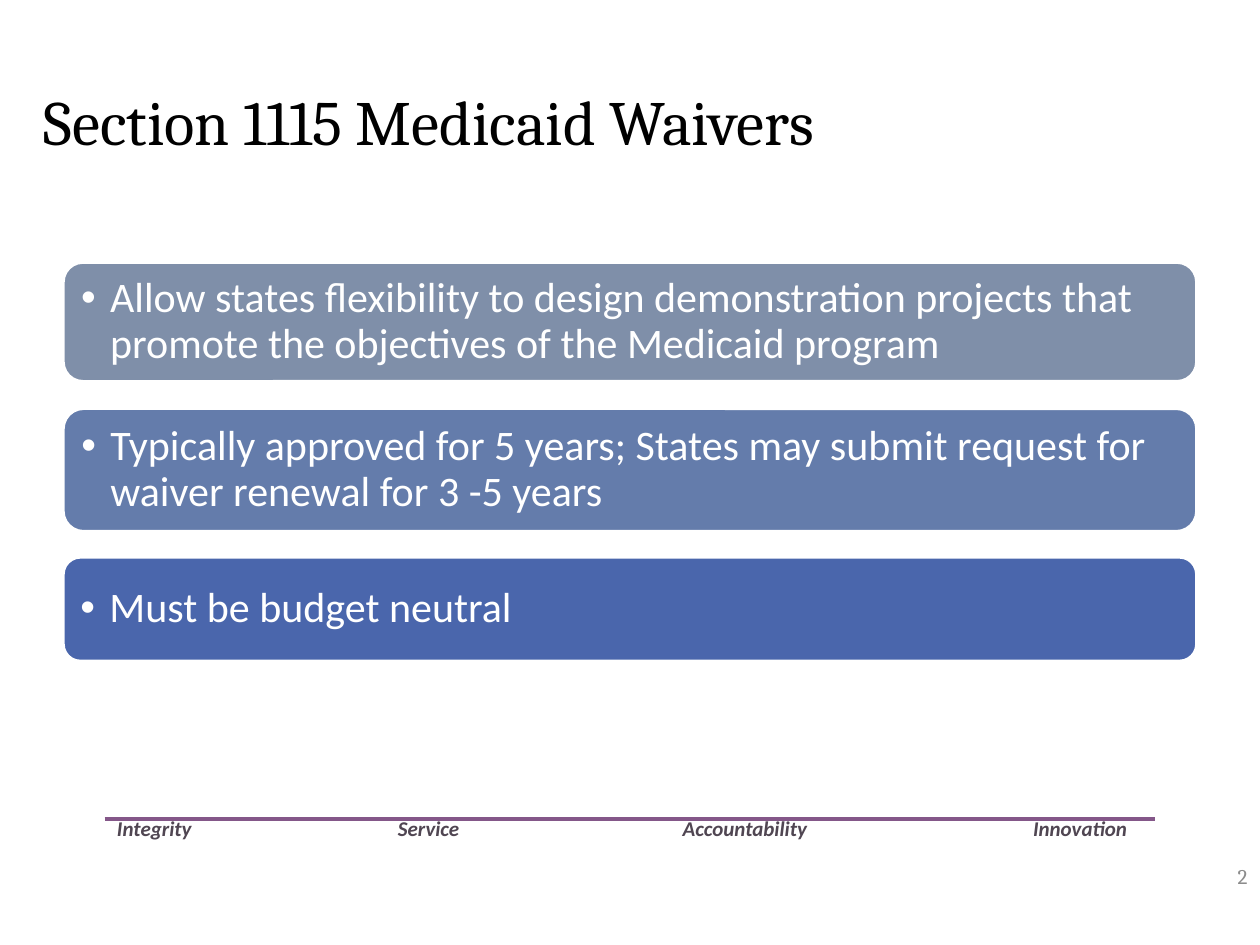
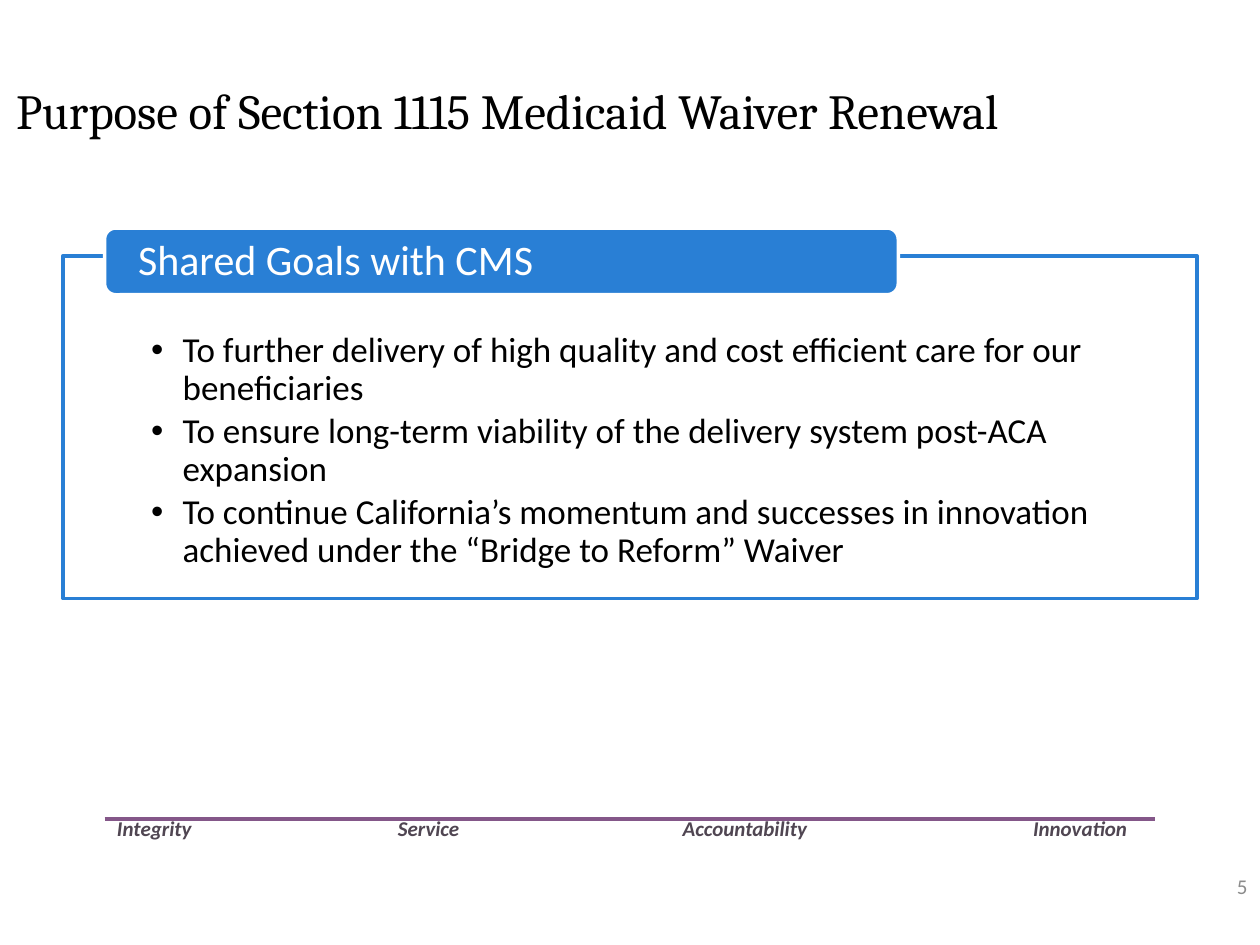
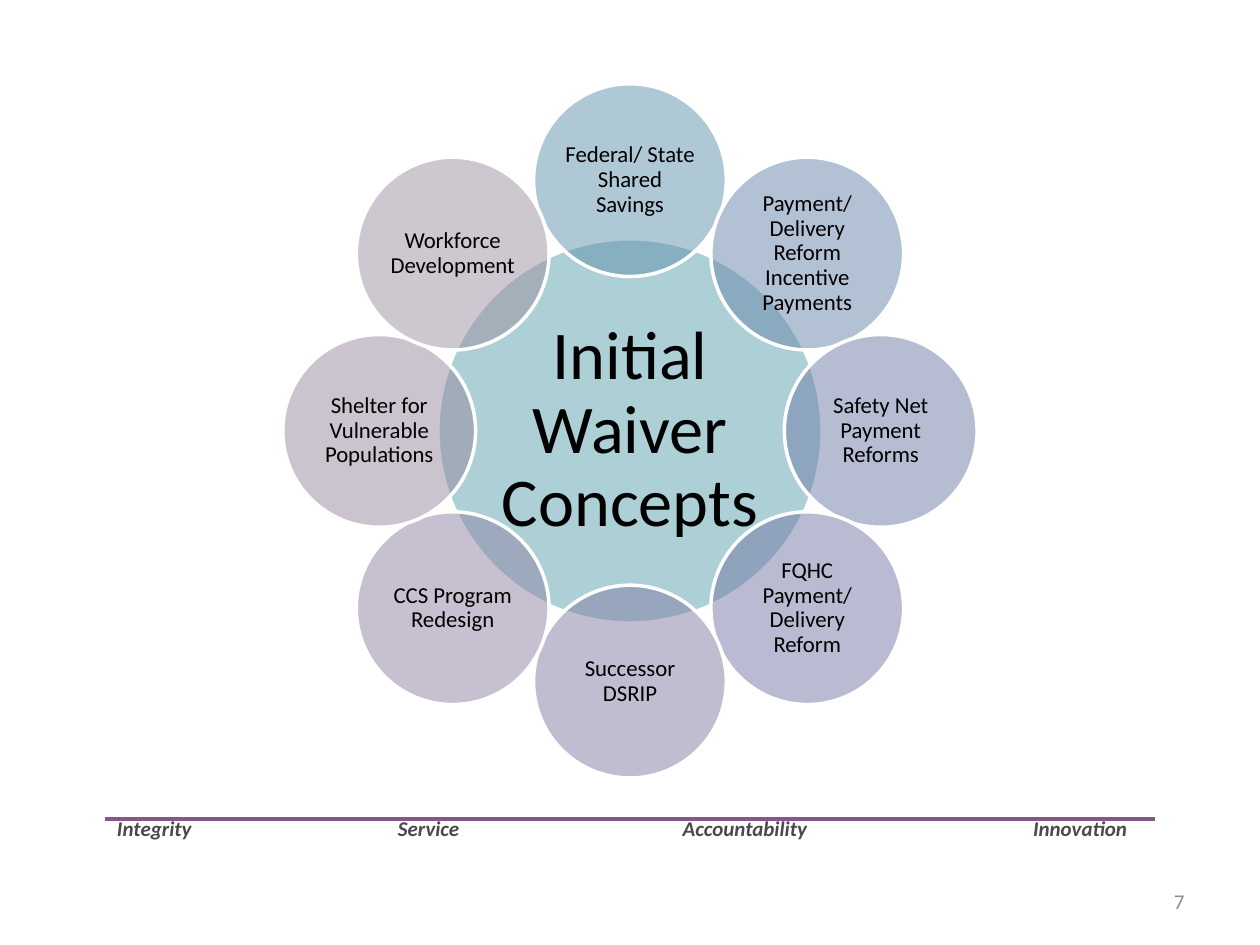
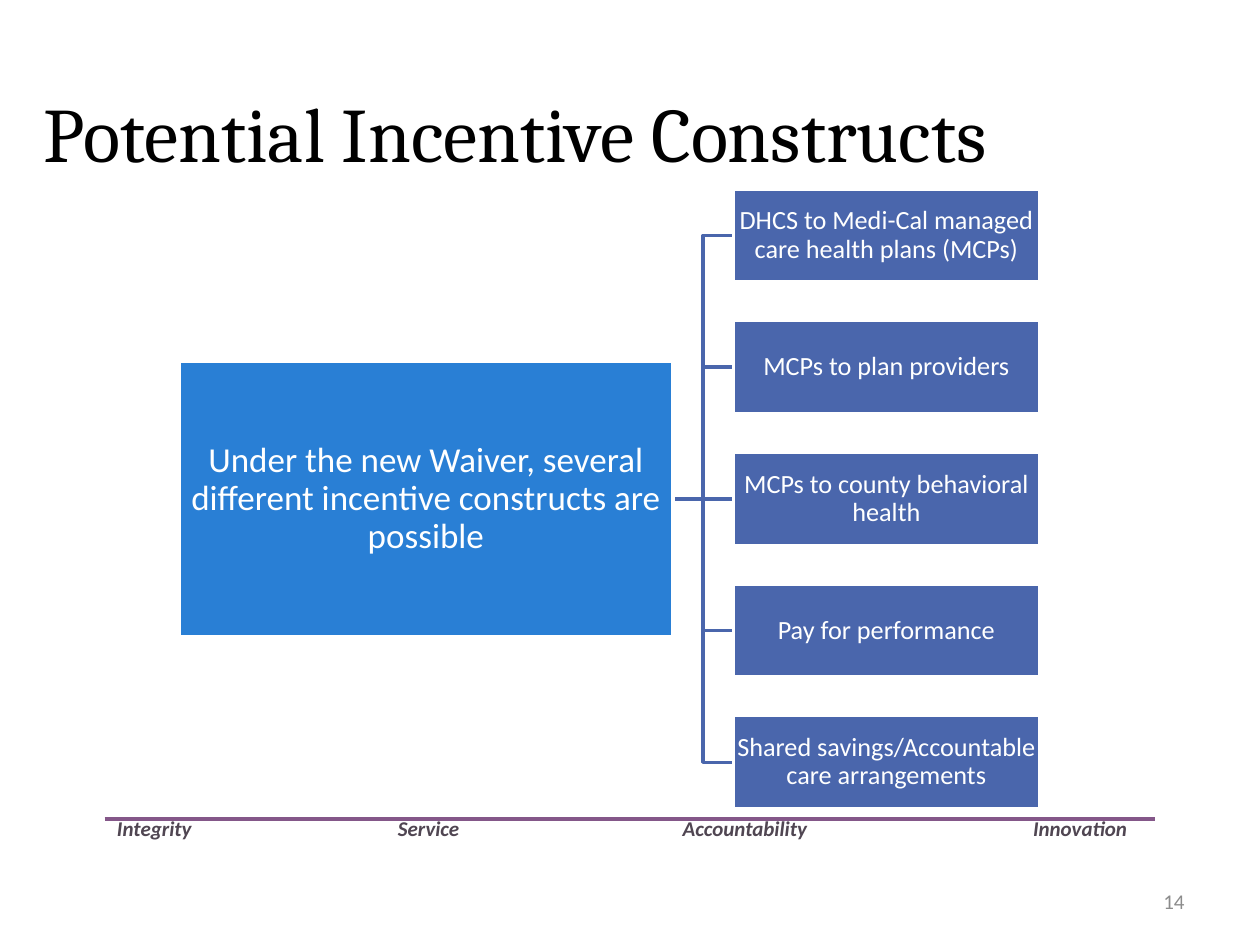
from dataclasses import dataclass
from math import cos, pi, sin

from lxml import etree
from pptx import Presentation
from pptx.dml.color import RGBColor
from pptx.enum.shapes import MSO_CONNECTOR, MSO_SHAPE
from pptx.enum.text import MSO_ANCHOR, PP_ALIGN
from pptx.oxml.ns import qn
from pptx.util import Inches, Pt

RECTANGLE = MSO_SHAPE.RECTANGLE
ROUNDED = MSO_SHAPE.ROUNDED_RECTANGLE
OVAL = MSO_SHAPE.OVAL
STRAIGHT, ELBOW = MSO_CONNECTOR.STRAIGHT, MSO_CONNECTOR.ELBOW
TOP, MIDDLE = MSO_ANCHOR.TOP, MSO_ANCHOR.MIDDLE
LEFT, CENTER, RIGHT = PP_ALIGN.LEFT, PP_ALIGN.CENTER, PP_ALIGN.RIGHT
SIDE_LEFT, SIDE_RIGHT = 1, 3

COLORS = {
    "white": "FFFFFF", "black": "000000", "number": "8C8C8C",
    "footer": "504652", "rule": "845789",
    "blue": "297FD5", "indigo": "4A66AC", "steel": "647CAB", "slate": "7F8FA9",
    "hub": "5AA2AE",
}
BODY_FONT, TITLE_FONT = "Calibri", "Cambria"
FOOTER_WORDS = ("Integrity", "Service", "Accountability", "Innovation")
FOOTER_TABS = (2.23, 4.49, 7.27)


@dataclass(frozen=True)
class Area:
    left: float
    top: float
    width: float
    height: float

    def lengths(self) -> tuple:
        return tuple(Inches(n) for n in (self.left, self.top, self.width, self.height))


@dataclass(frozen=True)
class TextStyle:
    size: float
    color: str = "black"
    font: str = BODY_FONT
    align: PP_ALIGN = LEFT
    anchor: MSO_ANCHOR = MIDDLE
    bold_italic: bool = False
    spacing: float = 1.0
    after: float = 0
    hang: float = 0
    insets: tuple = (0.1, 0.05, 0.1, 0.05)


@dataclass(frozen=True)
class Panel:
    kind: MSO_SHAPE
    fill: str
    line: str = "white"
    opacity: int = 100


@dataclass(frozen=True)
class Bar:
    text: str
    fill: str
    top: float
    height: float


@dataclass(frozen=True)
class Petal:
    text: str
    fill: str


BAR_STYLE = TextStyle(24, "white", spacing=0.9, hang=0.23, insets=(0.1,) * 4)
GOAL_STYLE = TextStyle(20, anchor=TOP, spacing=0.9, after=3, hang=0.25,
                       insets=(0.7, 0.61, 0.7, 0.16))
TAB_STYLE = TextStyle(24, "white", spacing=0.9, insets=(0.24, 0, 0.24, 0))
HUB_STYLE = TextStyle(39, align=CENTER, spacing=0.9, insets=(0.05,) * 4)
PETAL_STYLE = TextStyle(13, align=CENTER, spacing=0.9, insets=(0.02,) * 4)
ROOT_STYLE = TextStyle(20, "white", align=CENTER, spacing=0.9, insets=(0.01,) * 4)
LEAF_STYLE = TextStyle(15, "white", align=CENTER, spacing=0.9, insets=(0.01,) * 4)
FOOTER_STYLE = TextStyle(12, "footer", anchor=TOP, bold_italic=True, insets=(0.1, 0, 0.1, 0))

BARS = (
    Bar("Allow states flexibility to design demonstration projects that "
        "promote the objectives of the Medicaid program", "slate", 2.08, 0.95),
    Bar("Typically approved for 5 years; States may submit request for "
        "waiver renewal for 3 -5 years", "steel", 3.24, 0.98),
    Bar("Must be budget neutral", "indigo", 4.42, 0.83),
)
GOALS = (
    "To further delivery of high quality and cost efficient care for our beneficiaries",
    "To ensure long-term viability of the delivery system post-ACA expansion",
    "To continue California’s momentum and successes in innovation "
    "achieved under the “Bridge to Reform” Waiver",
)
# Clockwise from the top
PETALS = (
    Petal("Federal/ State Shared Savings", "6192AC"),
    Petal("Payment/ Delivery Reform Incentive Payments", "6885AA"),
    Petal("Safety Net Payment Reforms", "6F7CA8"),
    Petal("FQHC Payment/ Delivery Reform", "7677A6"),
    Petal("Successor DSRIP", "847DA4"),
    Petal("CCS Program Redesign", "9083A3"),
    Petal("Shelter for Vulnerable Populations", "988AA1"),
    Petal("Workforce Development", "9D90A0"),
)
CONSTRUCTS = (
    "DHCS to Medi-Cal managed care health plans (MCPs)",
    "MCPs to plan providers",
    "MCPs to county behavioral health",
    "Pay for performance",
    "Shared savings/Accountable care arrangements",
)


def rgb(name: str) -> RGBColor:
    """Look up a named colour, or take the hex string itself."""
    return RGBColor.from_string(COLORS.get(name, name))


def add_bullet(para, hang: float) -> None:
    properties = para._p.get_or_add_pPr()
    properties.set("marL", str(Inches(hang)))
    properties.set("indent", str(-Inches(hang)))
    etree.SubElement(properties, qn("a:buFont"), typeface="Arial")
    etree.SubElement(properties, qn("a:buChar"), char="•")


def add_tabs(para, stops: tuple) -> None:
    tab_list = etree.SubElement(para._p.get_or_add_pPr(), qn("a:tabLst"))
    for stop in stops:
        etree.SubElement(tab_list, qn("a:tab"), pos=str(Inches(stop)), algn="l")


def write(shape, texts: tuple, style: TextStyle, tabs: tuple = ()) -> None:
    frame = shape.text_frame
    frame.word_wrap = True
    frame.vertical_anchor = style.anchor
    (frame.margin_left, frame.margin_top,
     frame.margin_right, frame.margin_bottom) = (Inches(n) for n in style.insets)
    for index, text in enumerate(texts):
        para = frame.add_paragraph() if index else frame.paragraphs[0]
        if style.hang:
            add_bullet(para, style.hang)
        if tabs:
            add_tabs(para, tabs)
        para.alignment = style.align
        para.line_spacing = style.spacing
        para.space_after = Pt(style.after)
        span = para.add_run()
        span.text = text
        span.font.size = Pt(style.size)
        span.font.name = style.font
        span.font.bold = span.font.italic = style.bold_italic
        span.font.color.rgb = rgb(style.color)


def add_text(page, area: Area, text: str, style: TextStyle, tabs: tuple = ()) -> None:
    write(page.shapes.add_textbox(*area.lengths()), (text,), style, tabs)


def add_panel(page, area: Area, panel: Panel, texts: tuple, style: TextStyle):
    shape = page.shapes.add_shape(panel.kind, *area.lengths())
    shape.shadow.inherit = False
    shape.fill.solid()
    shape.fill.fore_color.rgb = rgb(panel.fill)
    if panel.opacity < 100:
        color = shape._element.spPr.find(qn("a:solidFill"))[0]
        etree.SubElement(color, qn("a:alpha"), val=str(panel.opacity * 1000))
    shape.line.color.rgb = rgb(panel.line)
    shape.line.width = Pt(2)
    write(shape, texts, style)
    return shape


def style_connector(connector, color: str, width: float) -> None:
    connector.line.color.rgb = rgb(color)
    connector.line.width = Pt(width)
    etree.SubElement(connector._element.spPr, qn("a:effectLst"))


def start_page(deck, number: str, number_area: Area, number_font: str = BODY_FONT):
    """Add a page with the footer rule, the four values and the page number."""
    page = deck.slides.add_slide(deck.slide_layouts[6])
    rule = page.shapes.add_connector(STRAIGHT, Inches(0.83), Inches(6.5),
                                     Inches(9.17), Inches(6.5))
    style_connector(rule, "rule", 2.25)
    add_text(page, Area(0.83, 6.47, 8.75, 0.33), "\t".join(FOOTER_WORDS),
             FOOTER_STYLE, FOOTER_TABS)
    add_text(page, number_area, number,
             TextStyle(12, "number", number_font, align=RIGHT))
    return page


def add_title(page, area: Area, text: str, size: float) -> None:
    add_text(page, area, text, TextStyle(size, font=TITLE_FONT))


def build_waivers(deck) -> None:
    page = start_page(deck, "2", Area(7.67, 6.75, 2.33, 0.4), TITLE_FONT)
    add_title(page, Area(0.25, 0.33, 9, 1.25), "Section 1115 Medicaid Waivers", 36)
    for bar in BARS:
        add_panel(page, Area(0.5, bar.top, 9, bar.height),
                  Panel(ROUNDED, bar.fill), (bar.text,), BAR_STYLE)


def build_purpose(deck) -> None:
    page = start_page(deck, "5", Area(7.67, 6.83, 2.33, 0.4))
    add_title(page, Area(0.03, 0.25, 9, 1.25),
              "Purpose of Section 1115 Medicaid Waiver Renewal", 28)
    add_panel(page, Area(0.5, 2.03, 9, 2.72),
              Panel(RECTANGLE, "white", "blue", 90), GOALS, GOAL_STYLE)
    add_panel(page, Area(0.83, 1.81, 6.3, 0.53),
              Panel(ROUNDED, "blue"), ("Shared Goals with CMS",), TAB_STYLE)


def build_concepts(deck) -> None:
    page = start_page(deck, "7", Area(7.17, 6.95, 2.33, 0.4))
    center_x, center_y, radius = 5, 3.42, 1.99

    def add_circle(x: float, y: float, size: float, fill: str, text: str,
                   style: TextStyle) -> None:
        add_panel(page, Area(x - size / 2, y - size / 2, size, size),
                  Panel(OVAL, fill, opacity=50), (text,), style)

    add_circle(center_x, center_y, 3.05, "hub", "Initial Waiver Concepts", HUB_STYLE)
    for index, petal in enumerate(PETALS):
        angle = 2 * pi * index / len(PETALS)
        add_circle(center_x + radius * sin(angle), center_y - radius * cos(angle),
                   1.53, petal.fill, petal.text, PETAL_STYLE)


def build_constructs(deck) -> None:
    page = start_page(deck, "14", Area(7.17, 6.95, 2.33, 0.4))
    add_title(page, Area(0.25, 0.42, 9.5, 1.25), "Potential Incentive Constructs", 44)
    leaf_top, leaf_height, leaf_step = 1.5, 0.74, 1.045
    middle = len(CONSTRUCTS) // 2
    root_height = 2.19
    root_top = leaf_top + middle * leaf_step + (leaf_height - root_height) / 2
    root = add_panel(page, Area(1.42, root_top, 3.92, root_height),
                     Panel(RECTANGLE, "blue"),
                     ("Under the new Waiver, several different incentive "
                      "constructs are possible",), ROOT_STYLE)
    for index, text in enumerate(CONSTRUCTS):
        leaf = add_panel(page, Area(5.82, leaf_top + index * leaf_step, 2.43, leaf_height),
                         Panel(RECTANGLE, "indigo"), (text,), LEAF_STYLE)
        branch = page.shapes.add_connector(STRAIGHT if index == middle else ELBOW, 0, 0, 0, 0)
        branch.begin_connect(root, SIDE_RIGHT)
        branch.end_connect(leaf, SIDE_LEFT)
        style_connector(branch, "indigo", 2)
        # Branches lie behind the boxes, whose white edges cover their ends
        root._element.addprevious(branch._element)


def main() -> None:
    deck = Presentation()
    deck.slide_width, deck.slide_height = Inches(10), Inches(7.5)
    for build in (build_waivers, build_purpose, build_concepts, build_constructs):
        build(deck)
    deck.save("out.pptx")


if __name__ == "__main__":
    main()
